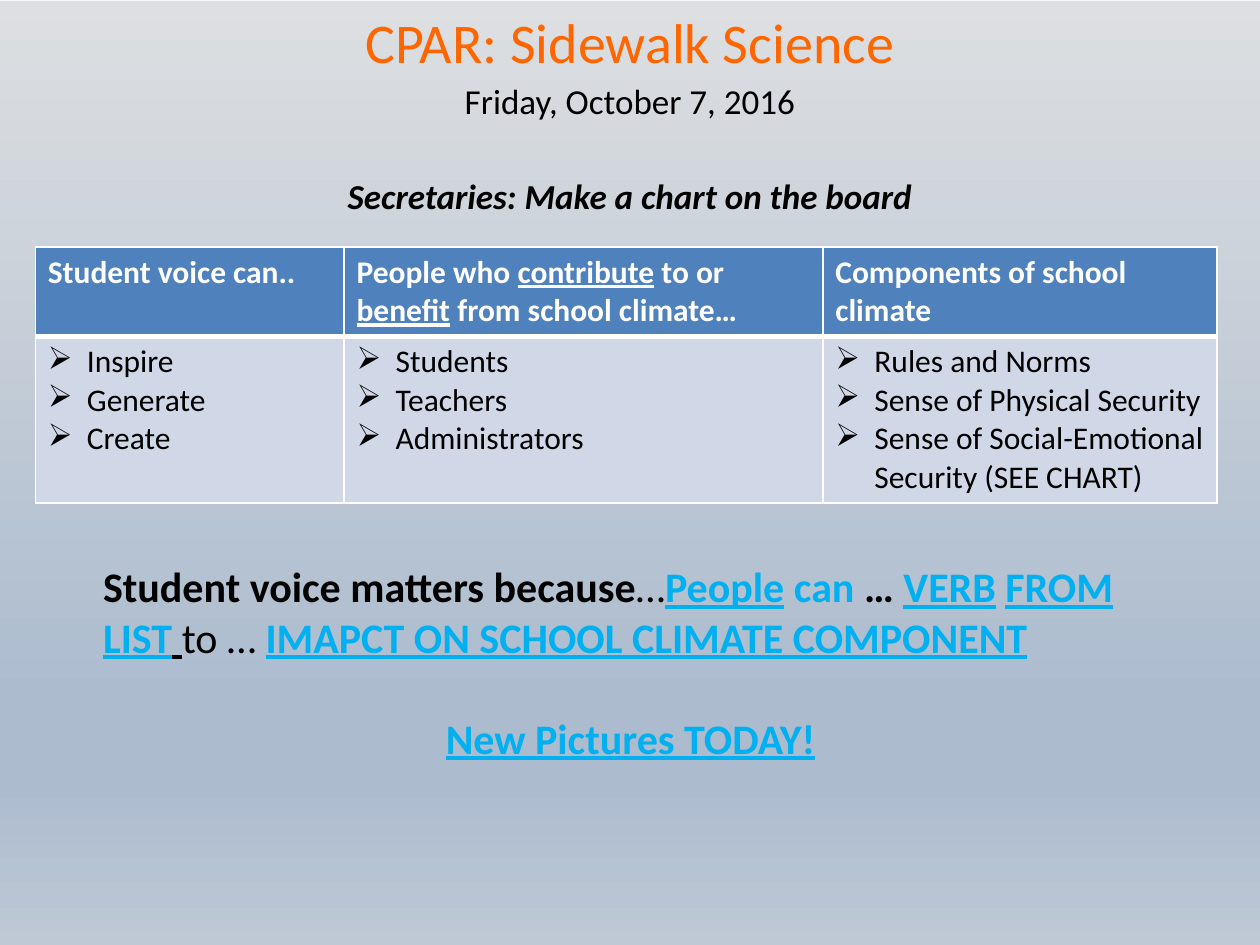
from dataclasses import dataclass

from lxml import etree
from pptx import Presentation
from pptx.dml.color import RGBColor
from pptx.enum.shapes import MSO_SHAPE
from pptx.enum.text import MSO_ANCHOR, PP_ALIGN
from pptx.oxml.ns import qn
from pptx.util import Inches, Pt

RECTANGLE = MSO_SHAPE.RECTANGLE
TOP = MSO_ANCHOR.TOP
LEFT, CENTER = PP_ALIGN.LEFT, PP_ALIGN.CENTER
FONT = "Calibri"
COLORS = {
    "title": "FF6600", "text": "000000", "accent": "00B0F0", "white": "FFFFFF",
    "header": "4F81BD", "body": "D0D8E8", "veil": "A5A5A5",
}
BACKGROUND_STOPS = [(0, "F6F9FC"), (74, "B0C6E1"), (83, "B0C6E1"), (100, "CAD9EB")]
BULLET_INDENT = Inches(0.31)


@dataclass
class Span:
    text: str
    color: str | None = None
    bold: bool | None = None
    underline: bool | None = None


@dataclass
class Line:
    spans: list[Span]
    size: float
    color: str = "text"
    bold: bool = False
    italic: bool = False
    align: PP_ALIGN = LEFT
    space_before: float = 0
    bullet: bool = False


@dataclass
class Column:
    width: float
    header: list[Line]
    items: list[str]


def rgb(name: str) -> RGBColor:
    return RGBColor.from_string(COLORS[name])


def add_bullet(paragraph) -> None:
    properties = paragraph._p.get_or_add_pPr()
    properties.set("marL", str(BULLET_INDENT))
    properties.set("indent", str(-BULLET_INDENT))
    bullet = etree.Element(qn("a:buChar"), char="➢")
    properties.insert_element_before(bullet, "a:tabLst", "a:defRPr", "a:extLst")


def write_lines(text_frame, lines: list[Line]) -> None:
    for index, line in enumerate(lines):
        paragraph = text_frame.add_paragraph() if index else text_frame.paragraphs[0]
        paragraph.alignment = line.align
        paragraph.space_before = Pt(line.space_before)
        font = paragraph.font
        font.name, font.size = FONT, Pt(line.size)
        font.bold, font.italic = line.bold, line.italic
        font.color.rgb = rgb(line.color)
        if line.bullet:
            add_bullet(paragraph)
        for span in line.spans:
            run = paragraph.add_run()
            run.text = span.text
            run.font.bold = span.bold
            run.font.underline = span.underline
            if span.color:
                run.font.color.rgb = rgb(span.color)


def paint_background(slide) -> None:
    fill = slide.background.fill
    fill.gradient()
    fill.gradient_angle = 270
    stops = slide.element.find(".//" + qn("a:gsLst"))
    for stop in list(stops):
        stops.remove(stop)
    for percent, color in BACKGROUND_STOPS:
        stop = etree.SubElement(stops, qn("a:gs"), pos=str(percent * 1000))
        etree.SubElement(stop, qn("a:srgbClr"), val=color)


def add_heading(slide, lines: list[Line]) -> None:
    """Cover the slide with a translucent veil that carries the heading lines."""
    veil = slide.shapes.add_shape(RECTANGLE, 0, Inches(0.01), Inches(10), Inches(7.5))
    veil.shadow.inherit = False
    veil.line.fill.background()
    veil.fill.solid()
    veil.fill.fore_color.rgb = rgb("veil")
    color = veil._element.spPr.find(".//" + qn("a:srgbClr"))
    etree.SubElement(color, qn("a:alpha"), val="30000")
    veil.text_frame.vertical_anchor = TOP
    write_lines(veil.text_frame, lines)


def style_cell(cell, fill: str, top: float, bottom: float) -> None:
    """Fill a cell and give it white borders; top and bottom are widths in points."""
    cell.fill.solid()
    cell.fill.fore_color.rgb = rgb(fill)
    properties = cell._tc.get_or_add_tcPr()
    borders = {"a:lnL": 1, "a:lnR": 1, "a:lnT": top, "a:lnB": bottom}
    for position, (tag, width) in enumerate(borders.items()):
        border = etree.Element(qn(tag), w=str(Pt(width)))
        solid = etree.SubElement(border, qn("a:solidFill"))
        etree.SubElement(solid, qn("a:srgbClr"), val=COLORS["white"])
        properties.insert(position, border)


def add_voice_table(slide, columns: list[Column]) -> None:
    row_heights = (0.71, 1.32)
    total_width = sum(column.width for column in columns)
    table = slide.shapes.add_table(
        len(row_heights), len(columns), Inches(0.28), Inches(1.96),
        Inches(total_width), Inches(sum(row_heights)),
    ).table
    for row, height in zip(table.rows, row_heights):
        row.height = Inches(height)
    for index, column in enumerate(columns):
        table.columns[index].width = Inches(column.width)
        header, body = table.cell(0, index), table.cell(1, index)
        style_cell(header, "header", top=1, bottom=3)
        style_cell(body, "body", top=3, bottom=1)
        write_lines(header.text_frame, column.header)
        write_lines(body.text_frame,
                    [Line([Span(item)], 18, bullet=True) for item in column.items])


def header_line(*spans: Span) -> Line:
    return Line(list(spans), 18, color="white", bold=True)


HEADING = [
    Line([Span("CPAR: Sidewalk Science")], 32, color="title", align=CENTER),
    Line([Span("Friday, October 7, 2016")], 20, align=CENTER, space_before=2.8),
    Line([Span("Secretaries: Make a chart on the board")], 20, bold=True, italic=True,
         align=CENTER, space_before=30),
]
COLUMNS = [
    Column(2.45, [header_line(Span("Student voice can.."))],
           ["Inspire", "Generate", "Create"]),
    Column(3.8,
           [header_line(Span("People who "), Span("contribute", underline=True),
                        Span(" to or")),
            header_line(Span("benefit", underline=True),
                        Span(" from school climate…"))],
           ["Students", "Teachers", "Administrators"]),
    Column(3.13, [header_line(Span("Components of school climate"))],
           ["Rules and Norms", "Sense of Physical Security",
            "Sense of Social-Emotional Security (SEE CHART)"]),
]
PROMPT = [
    Line([
        Span("Student voice matters because"),
        Span("…", bold=False),
        Span("People", "accent", underline=True),
        Span(" ", bold=False),
        Span("can ", "accent"),
        Span("… "),
        Span("VERB", "accent", underline=True),
        Span(" "),
        Span("FROM LIST", "accent", underline=True),
        Span(" ", bold=False, underline=True),
        Span("to … ", bold=False),
        Span("IMAPCT ON SCHOOL CLIMATE COMPONENT", "accent", underline=True),
    ], 24, bold=True),
    Line([Span("New Pictures TODAY!", underline=True)], 24, color="accent", bold=True,
         align=CENTER, space_before=29),
]


def main() -> None:
    presentation = Presentation()
    presentation.slide_width, presentation.slide_height = Inches(10), Inches(7.5)
    slide = presentation.slides.add_slide(presentation.slide_layouts[6])
    paint_background(slide)
    add_heading(slide, HEADING)
    add_voice_table(slide, COLUMNS)
    prompt = slide.shapes.add_textbox(Inches(0.72), Inches(4.4), Inches(8.57), Inches(1.72))
    prompt.text_frame.word_wrap = True
    write_lines(prompt.text_frame, PROMPT)
    presentation.save("out.pptx")


if __name__ == "__main__":
    main()
